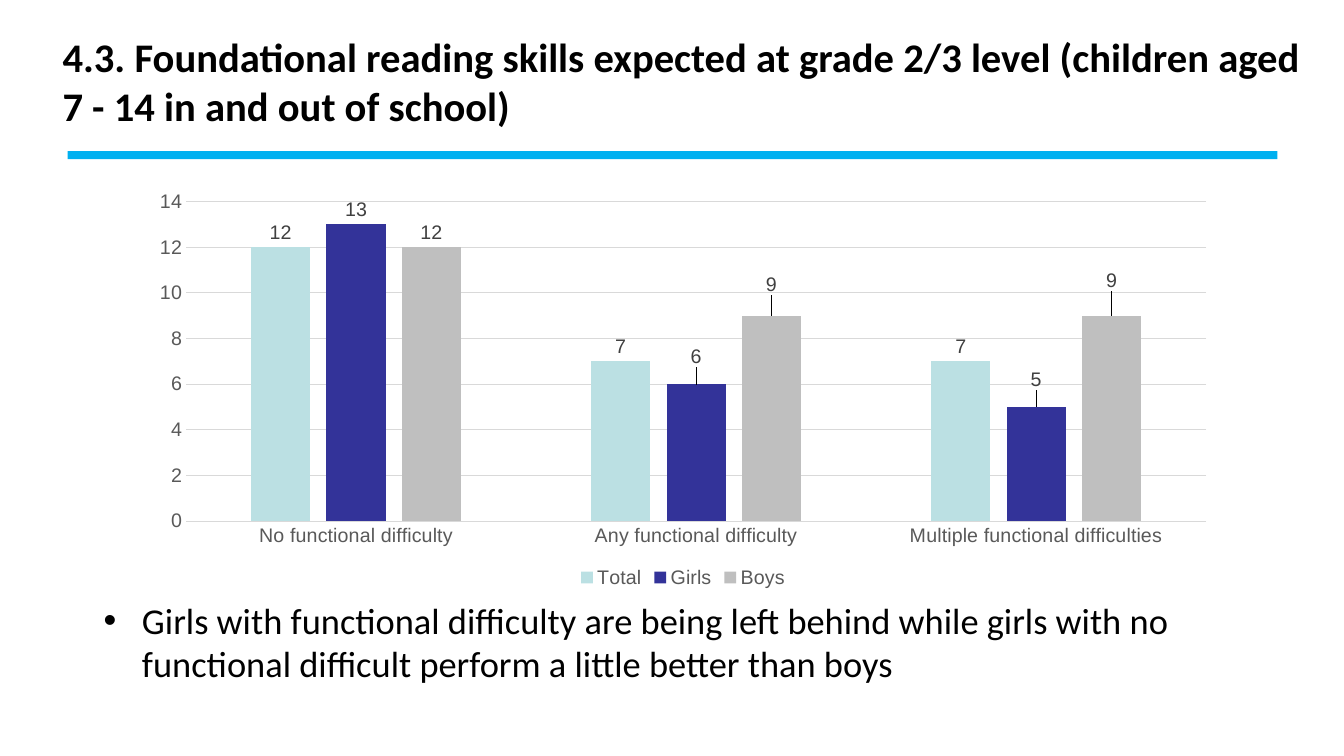
from lxml import etree
from pptx import Presentation
from pptx.chart.data import CategoryChartData
from pptx.dml.color import RGBColor
from pptx.enum.chart import XL_CHART_TYPE, XL_LABEL_POSITION, XL_LEGEND_POSITION, XL_TICK_MARK
from pptx.enum.shapes import MSO_SHAPE
from pptx.enum.text import MSO_ANCHOR, MSO_AUTO_SIZE, PP_ALIGN
from pptx.oxml import parse_xml
from pptx.oxml.ns import nsdecls, qn
from pptx.util import Inches, Pt

COLUMNS = XL_CHART_TYPE.COLUMN_CLUSTERED
OUTSIDE = XL_LABEL_POSITION.OUTSIDE_END
BOTTOM = XL_LEGEND_POSITION.BOTTOM
NO_TICK = XL_TICK_MARK.NONE
MIDDLE, TOP = MSO_ANCHOR.MIDDLE, MSO_ANCHOR.TOP

BLACK = RGBColor(0x00, 0x00, 0x00)
SKY = RGBColor(0x00, 0xB0, 0xF0)
AXIS_GREY = RGBColor(0x59, 0x59, 0x59)
LABEL_GREY = RGBColor(0x40, 0x40, 0x40)
GRID_GREY = RGBColor(0xD9, 0xD9, 0xD9)
AQUA = RGBColor(0xBB, 0xE0, 0xE3)
NAVY = RGBColor(0x33, 0x33, 0x99)
SILVER = RGBColor(0xBF, 0xBF, 0xBF)

# Content
TITLE = ("4.3. Foundational reading skills expected at grade 2/3 level "
         "(children aged 7 - 14 in and out of school)")
FINDING = ("Girls with functional difficulty are being left behind while girls "
           "with no functional difficult perform a little better than boys")
CATEGORIES = ["No functional difficulty", "Any functional difficulty",
              "Multiple functional difficulties"]
# name, values, colour, label shifts by point as fractions of the chart
SERIES = [
    ("Total", (12, 7, 7), AQUA, {}),
    ("Girls", (13, 6, 5), NAVY, {1: (0, -0.03), 2: (0, -0.03)}),
    ("Boys", (12, 9, 9), SILVER, {1: (0, -0.04), 2: (0, -0.05)}),
]


def box(*lengths):
    return [Inches(n) for n in lengths]


def set_font(font, name="Arial", size=14, color=AXIS_GREY, bold=False):
    font.name, font.size, font.bold = name, Pt(size), bold
    font.color.rgb = color


def write(shape, text, size, anchor=TOP, bold=False, bullet=False):
    tf = shape.text_frame
    tf.word_wrap = True
    tf.auto_size = MSO_AUTO_SIZE.NONE
    tf.vertical_anchor = anchor
    p = tf.paragraphs[0]
    p.alignment = PP_ALIGN.LEFT
    if bullet:
        pPr = p._p.get_or_add_pPr()
        pPr.set("marL", str(Inches(0.38)))
        pPr.set("indent", str(Inches(-0.43)))
        etree.SubElement(pPr, qn("a:buFont"), typeface="Arial")
        etree.SubElement(pPr, qn("a:buChar"), char="•")
    r = p.add_run()
    r.text = text
    set_font(r.font, "Calibri", size, BLACK, bold)


def shift_label(series, index, dx, dy):
    label = series.points[index].data_label
    label.position = OUTSIDE
    set_font(label.font, color=LABEL_GREY)
    idx = series._element.xpath(f"c:dLbls/c:dLbl/c:idx[@val='{index}']")[0]
    idx.addnext(parse_xml(
        f'<c:layout {nsdecls("c")}><c:manualLayout>'
        f'<c:x val="{dx}"/><c:y val="{dy}"/></c:manualLayout></c:layout>'))


prs = Presentation()
prs.slide_width, prs.slide_height = box(13.33, 7.5)
s = prs.slides.add_slide(prs.slide_layouts[5])

# Title and rule
title = s.shapes.title
title.left, title.top, title.width, title.height = box(0.52, 0.18, 12.57, 1.25)
write(title, TITLE, 29, anchor=MIDDLE, bold=True)

rule = s.shapes.add_shape(MSO_SHAPE.RECTANGLE, *box(0.67, 1.5, 12, 0.08))
rule.shadow.inherit = False
rule.fill.solid()
rule.fill.fore_color.rgb = SKY
rule.line.fill.background()

# Finding
write(s.shapes.add_textbox(*box(0.93, 5.88, 11.18, 1.09)), FINDING, 26, bullet=True)

# Chart
data = CategoryChartData()
data.categories = CATEGORIES
for name, values, _, _ in SERIES:
    data.add_series(name, values)
chart = s.shapes.add_chart(COLUMNS, *box(1.37, 1.81, 10.81, 4.07), data).chart
set_font(chart.font)
chart.has_title = False
chart.has_legend = True
chart.legend.position = BOTTOM
chart.legend.include_in_layout = False
set_font(chart.legend.font)

# Columns and labels
plot = chart.plots[0]
plot.gap_width, plot.overlap = 219, -27
plot.vary_by_categories = False
for series, (_, _, color, shifts) in zip(plot.series, SERIES):
    series.format.fill.solid()
    series.format.fill.fore_color.rgb = color
    series.invert_if_negative = False
    labels = series.data_labels
    labels.show_value = True
    labels.position = OUTSIDE
    labels.number_format, labels.number_format_is_linked = "0", False
    set_font(labels.font, color=LABEL_GREY)
    for index, (dx, dy) in shifts.items():
        shift_label(series, index, dx, dy)

# Axes
cat_axis, val_axis = chart.category_axis, chart.value_axis
for axis in (cat_axis, val_axis):
    axis.major_tick_mark = axis.minor_tick_mark = NO_TICK
    set_font(axis.tick_labels.font)
val_axis.minimum_scale, val_axis.maximum_scale, val_axis.major_unit = 0, 14, 2
val_axis.has_major_gridlines = True
val_axis.format.line.fill.background()
for line in (cat_axis.format.line, val_axis.major_gridlines.format.line):
    line.color.rgb = GRID_GREY
    line.width = Pt(0.75)

prs.save("out.pptx")
